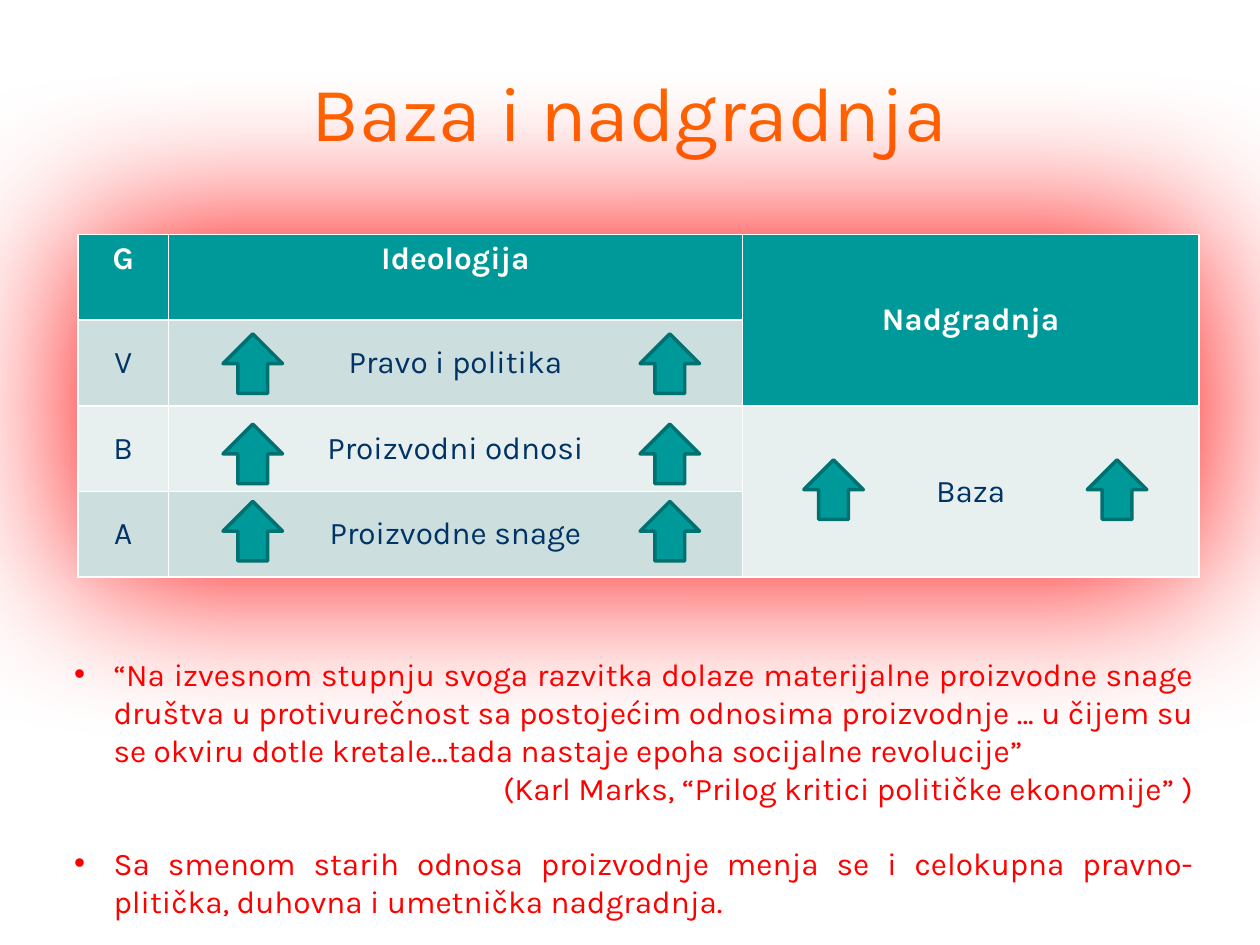
from dataclasses import dataclass

from lxml import etree
from pptx import Presentation
from pptx.dml.color import RGBColor
from pptx.enum import shapes, text
from pptx.oxml import ns
from pptx.util import Pt


@dataclass(frozen=True)
class Theme:
    font: str = "Karla"
    title_size: int = 44
    body_size: int = 18
    orange: str = "FF6600"
    red: str = "FF0000"
    teal: str = "009999"
    dark_teal: str = "007171"
    navy: str = "003366"
    white: str = "FFFFFF"
    band: str = "CCDEDE"
    light_band: str = "E7EFEF"


theme = Theme()


def style(paragraph, size, color, alignment, bold=False):
    paragraph.alignment = alignment
    font = paragraph.font
    font.name, font.size, font.bold = theme.font, Pt(size), bold
    font.color.rgb = RGBColor.from_string(color)


def add_child(parent, tag, **attributes):
    return etree.SubElement(parent, ns.qn(tag), attributes)


presentation = Presentation()
presentation.slide_width, presentation.slide_height = Pt(720), Pt(540)
slide = presentation.slides.add_slide(presentation.slide_layouts[6])

# Title
title = slide.shapes.add_textbox(Pt(14.4), Pt(30.24), Pt(691.2), Pt(66.24))
title.text_frame.word_wrap = True
title.text_frame.vertical_anchor = text.MSO_ANCHOR.MIDDLE
title.text_frame.text = "Baza i nadgradnja"
style(title.text_frame.paragraphs[0], theme.title_size, theme.orange, text.PP_ALIGN.CENTER)

# Table of base and superstructure
rows = [
    ("G", "Ideologija", "Nadgradnja"),
    ("V", "Pravo i politika", ""),
    ("B", "Proizvodni odnosi", "Baza"),
    ("A", "Proizvodne snage", ""),
]
row_fills = [theme.teal, theme.band, theme.light_band, theme.band]
table = slide.shapes.add_table(4, 3, Pt(44.64), Pt(133.92), Pt(640.4), Pt(196)).table
for column, width in zip(table.columns, (51.6, 328, 260.8)):
    column.width = Pt(width)
for row_index, (labels, fill) in enumerate(zip(rows, row_fills)):
    table.rows[row_index].height = Pt(49)
    header = row_index == 0
    for column_index, label in enumerate(labels):
        cell = table.cell(row_index, column_index)
        cell.text = label
        cell.fill.solid()
        cell.fill.fore_color.rgb = RGBColor.from_string(fill)
        top = header and column_index < 2
        cell.vertical_anchor = text.MSO_ANCHOR.TOP if top else text.MSO_ANCHOR.MIDDLE
        style(cell.text_frame.paragraphs[0], theme.body_size,
              theme.white if header else theme.navy, text.PP_ALIGN.CENTER, header)
for first_row in (0, 2):
    table.cell(first_row, 2).merge(table.cell(first_row + 1, 2))

# Soft red halo around the table
properties = table._tbl.tblPr
effects = etree.Element(ns.qn("a:effectLst"))
properties.insert(0, effects)
halo = add_child(effects, "a:outerShdw", blurRad=str(Pt(100)), dist="0", dir="0",
                 algn="ctr", rotWithShape="0")
add_child(halo, "a:srgbClr", val=theme.red)

# Upward arrows beside the labels
arrow_size = 34
arrow_places = [(left, top) for left in (365.76, 127.44) for top in (190.8, 242.4, 286.56)]
arrow_places += [(left, 262.8) for left in (621.36, 459.36)]
for left, top in arrow_places:
    arrow = slide.shapes.add_shape(shapes.MSO_SHAPE.UP_ARROW, Pt(left), Pt(top),
                                   Pt(arrow_size), Pt(arrow_size))
    arrow.shadow.inherit = False
    arrow.fill.solid()
    arrow.fill.fore_color.rgb = RGBColor.from_string(theme.teal)
    arrow.line.color.rgb = RGBColor.from_string(theme.dark_teal)
    arrow.line.width = Pt(2)

# Quotation and comment
line_height = 21.6
quotation = slide.shapes.add_textbox(Pt(35.28), Pt(349.2), Pt(653.76), Pt(203.76))
frame = quotation.text_frame
frame.word_wrap = True
frame.margin_top = Pt(3.6 + line_height)
paragraphs = [
    ("“Na izvesnom stupnju svoga razvitka dolaze materijalne proizvodne snage društva "
     "u protivurečnost sa postojećim odnosima proizvodnje ... u čijem su se okviru dotle "
     "kretale...tada nastaje epoha socijalne revolucije”", True, 0),
    ("(Karl Marks, “Prilog kritici političke ekonomije” )", False, 0),
    ("Sa smenom starih odnosa proizvodnje menja se i celokupna pravno-plitička, "
     "duhovna i umetnička nadgradnja.", True, line_height),
]
for index, (wording, bulleted, gap) in enumerate(paragraphs):
    paragraph = frame.add_paragraph() if index else frame.paragraphs[0]
    paragraph.text = wording
    paragraph.space_before = Pt(gap)
    style(paragraph, theme.body_size, theme.red,
          text.PP_ALIGN.JUSTIFY if bulleted else text.PP_ALIGN.RIGHT)
    if bulleted:
        settings = paragraph._p.get_or_add_pPr()
        settings.set("marL", str(Pt(22.5)))
        settings.set("indent", str(-Pt(22.5)))
        bullet_font = etree.Element(ns.qn("a:buFont"), typeface="Arial")
        bullet = etree.Element(ns.qn("a:buChar"), char="•")
        settings.find(ns.qn("a:defRPr")).addprevious(bullet_font)
        bullet_font.addnext(bullet)

presentation.save("out.pptx")
